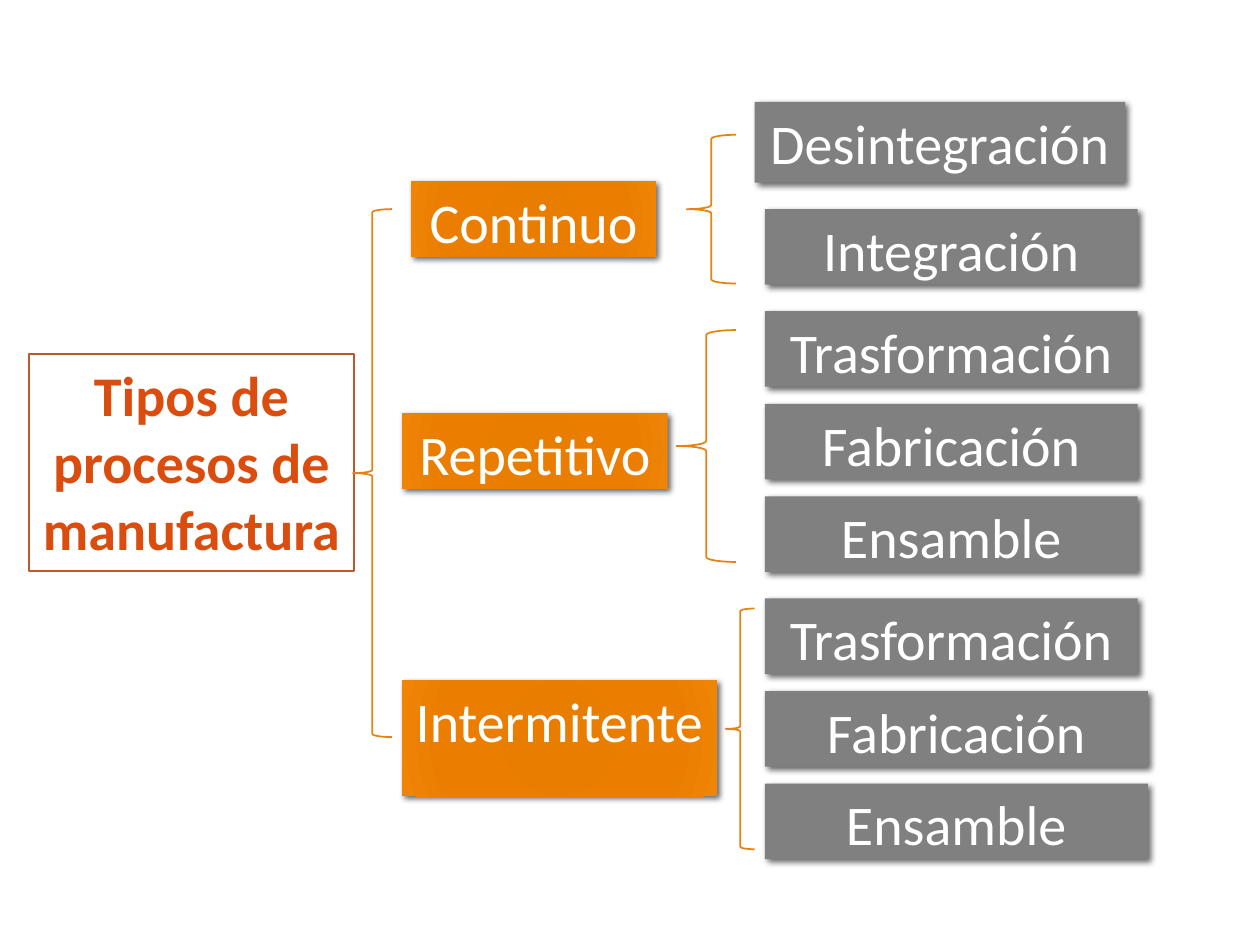
from dataclasses import dataclass
from typing import Optional

import lxml.etree
import pptx
import pptx.dml.color
import pptx.enum.shapes
import pptx.enum.text
import pptx.oxml
import pptx.oxml.ns
import pptx.util

Inches = pptx.util.Inches
Pt = pptx.util.Pt
MSO = pptx.enum.shapes.MSO_SHAPE


@dataclass(frozen=True)
class Theme:
    font: str = "Calibri"
    size: int = 32
    white: str = "FFFFFF"
    gray: str = "808080"
    title: str = "DA4D0F"
    title_line: str = "BD582C"
    brace: str = "E48312"
    shadow: str = "000000"
    orange: tuple = ((0, "E57B00"), (34, "E87D00"), (70, "EB7E00"), (100, "EF8407"))


@dataclass(frozen=True)
class Box:
    text: str
    left: float
    top: float
    width: float
    height: float = 0.6


@dataclass(frozen=True)
class Brace:
    left: float
    top: float
    width: float
    height: float


@dataclass(frozen=True)
class Branch:
    process: Box
    brace: Brace
    operations: tuple


THEME = Theme()
OP_LEFT, OP_WIDTH, OP_PITCH = 6.07, 2.96, 0.735


def operation_stack(top: float, widths: tuple) -> tuple:
    names = ("Trasformación", "Fabricación", "Ensamble")
    return tuple(
        Box(name, OP_LEFT, top + i * OP_PITCH, width)
        for i, (name, width) in enumerate(zip(names, widths))
    )


TITLE = Box("Tipos de procesos de manufactura", 0.23, 2.81, 2.58, 1.72)
MAIN_BRACE = Brace(2.8, 1.66, 0.31, 4.19)
BRANCHES = (
    Branch(
        Box("Continuo", 3.26, 1.44, 1.95),
        Brace(5.45, 1.07, 0.39, 1.18),
        (
            Box("Desintegración", 5.99, 0.81, 2.94, 0.64),
            Box("Integración", OP_LEFT, 1.66, OP_WIDTH),
        ),
    ),
    Branch(
        Box("Repetitivo", 3.19, 3.28, 2.11),
        Brace(5.37, 2.62, 0.47, 1.84),
        operation_stack(2.47, (OP_WIDTH,) * 3),
    ),
    Branch(
        Box("Intermitente", 3.19, 5.4, 2.5, 0.92),
        Brace(5.76, 4.83, 0.23, 1.91),
        operation_stack(4.75, (OP_WIDTH, 3.04, 3.04)),
    ),
)


def rgb(value: str) -> pptx.dml.color.RGBColor:
    return pptx.dml.color.RGBColor.from_string(value)


def add_shape(slide, kind, item, line: Optional[str] = None, weight: float = 1):
    sp = slide.shapes.add_shape(
        kind, Inches(item.left), Inches(item.top), Inches(item.width), Inches(item.height)
    )
    sp.shadow.inherit = False
    if line:
        sp.line.color.rgb = rgb(line)
        sp.line.width = Pt(weight)
    else:
        sp.line.fill.background()
    return sp


def add_shadow(sp) -> None:
    effects = sp._element.spPr.find(pptx.oxml.ns.qn("a:effectLst"))
    effects.append(pptx.oxml.parse_xml(
        f'<a:outerShdw {pptx.oxml.ns.nsdecls("a")} blurRad="{Pt(3.5)}" dist="{Pt(2)}" '
        f'dir="{45 * 60000}" algn="tl" rotWithShape="0"><a:srgbClr val="{THEME.shadow}">'
        '<a:alpha val="60000"/></a:srgbClr></a:outerShdw>'
    ))


def fill_radial(sp, stops: tuple) -> None:
    sp.fill.gradient()
    grad = sp._element.spPr.find(pptx.oxml.ns.qn("a:gradFill"))
    for child in list(grad):
        grad.remove(child)
    gs_list = lxml.etree.SubElement(grad, pptx.oxml.ns.qn("a:gsLst"))
    for position, color in stops:
        gs = lxml.etree.SubElement(gs_list, pptx.oxml.ns.qn("a:gs"), pos=str(position * 1000))
        lxml.etree.SubElement(gs, pptx.oxml.ns.qn("a:srgbClr"), val=color)
    radial = lxml.etree.SubElement(grad, pptx.oxml.ns.qn("a:path"), path="circle")
    edges = dict.fromkeys("ltrb", "100000")
    lxml.etree.SubElement(radial, pptx.oxml.ns.qn("a:fillToRect"), **edges)


def set_text(sp, text: str, color: str, bold: bool = False, wrap: bool = False) -> None:
    tf = sp.text_frame
    frame_format = {
        "word_wrap": wrap,
        "auto_size": pptx.enum.text.MSO_AUTO_SIZE.NONE,
        "vertical_anchor": pptx.enum.text.MSO_ANCHOR.TOP,
    }
    for name, value in frame_format.items():
        setattr(tf, name, value)
    p = tf.paragraphs[0]
    p.alignment = pptx.enum.text.PP_ALIGN.CENTER
    r = p.add_run()
    r.text = text
    font_format = {"name": THEME.font, "size": Pt(THEME.size), "bold": bold}
    for name, value in font_format.items():
        setattr(r.font, name, value)
    r.font.color.rgb = rgb(color)


def draw_title(slide, box: Box) -> None:
    sp = add_shape(slide, MSO.RECTANGLE, box, THEME.title_line, 1.25)
    sp.fill.solid()
    sp.fill.fore_color.rgb = rgb(THEME.white)
    set_text(sp, box.text, THEME.title, bold=True, wrap=True)


def draw_box(slide, box: Box, stops: Optional[tuple] = None) -> None:
    sp = add_shape(slide, MSO.RECTANGLE, box)
    if stops:
        fill_radial(sp, stops)
    else:
        sp.fill.solid()
        sp.fill.fore_color.rgb = rgb(THEME.gray)
    add_shadow(sp)
    set_text(sp, box.text, THEME.white)


def draw_brace(slide, brace: Brace) -> None:
    sp = add_shape(slide, MSO.LEFT_BRACE, brace, THEME.brace)
    sp.fill.background()


def main() -> None:
    prs = pptx.Presentation()
    prs.slide_width, prs.slide_height = Inches(10), Inches(7.5)
    s = prs.slides.add_slide(prs.slide_layouts[6])
    draw_title(s, TITLE)
    for branch in BRANCHES:
        draw_box(s, branch.process, THEME.orange)
        for operation in branch.operations:
            draw_box(s, operation)
    for brace in (MAIN_BRACE, *(branch.brace for branch in BRANCHES)):
        draw_brace(s, brace)
    prs.save("out.pptx")


if __name__ == "__main__":
    main()
